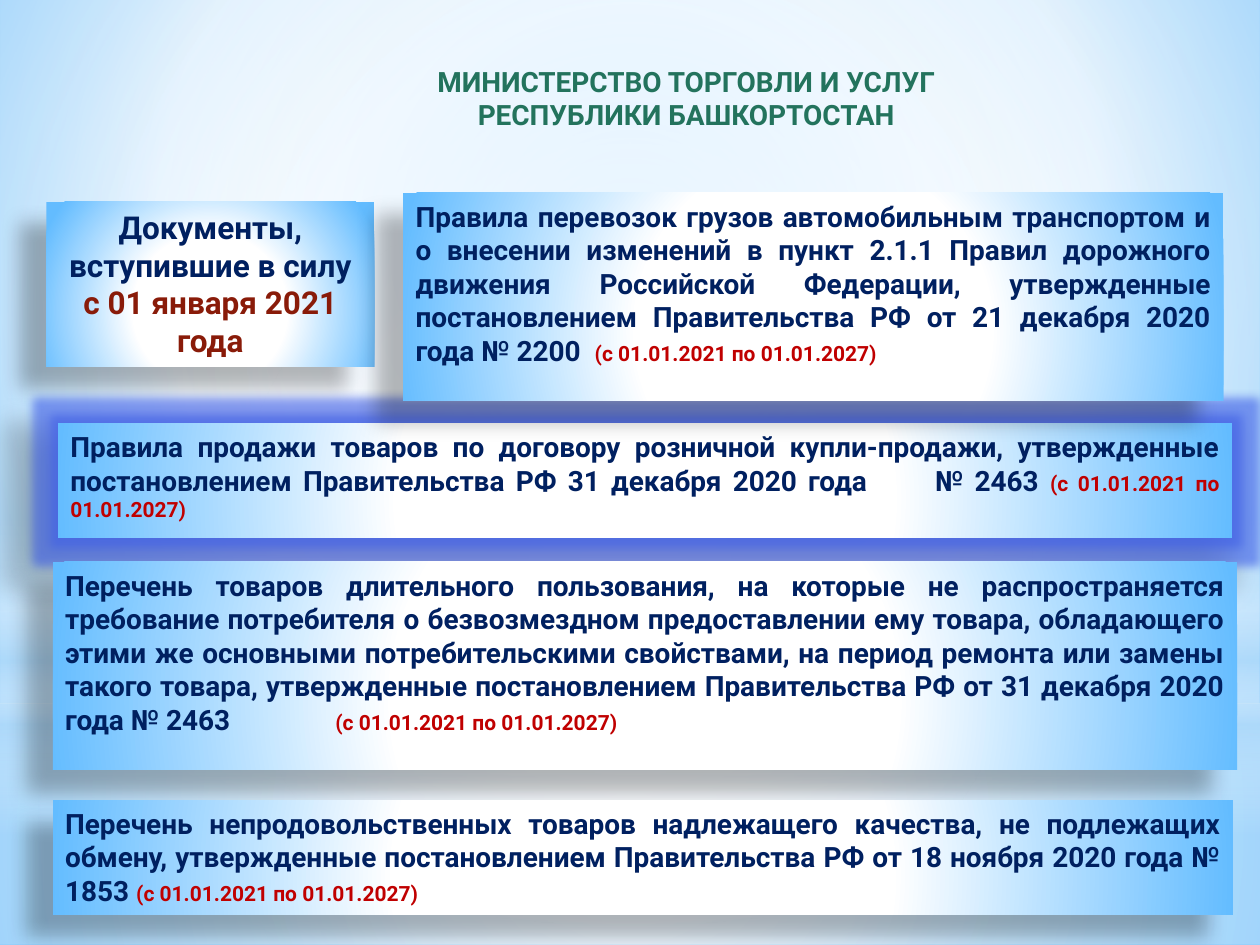
"""Build a slide listing trade regulations in force from 1 January 2021."""
from dataclasses import dataclass
from typing import Any, NamedTuple

import lxml.etree
import pptx
import pptx.dml.color
import pptx.enum.shapes
import pptx.enum.text
import pptx.oxml.ns
import pptx.util

Pt = pptx.util.Pt
qn = pptx.oxml.ns.qn
Align = pptx.enum.text.PP_ALIGN
Preset = pptx.enum.shapes.MSO_SHAPE


class Stop(NamedTuple):
    position: int
    color: str
    opacity: int = 100


class Gradient(NamedTuple):
    stops: tuple[Stop, ...]
    focus: tuple[int, int, int, int] | None = (50, 50, 50, 50)


class Frame(NamedTuple):
    left: float
    top: float
    width: float
    height: float


class Run(NamedTuple):
    text: str
    size: float
    color: str
    tracking: float = 0


@dataclass(frozen=True)
class Theme:
    font: str = "Roboto"
    navy: str = "002060"
    brick: str = "891B09"
    red: str = "C00000"
    green: str = "23735D"
    glow: str = "3F5FE8"
    shadow: str = "000000"
    white: str = "FFFFFF"
    pale: str = "B4DCFA"
    sky: str = "63BCFF"
    light_sky: str = "9ED5FF"
    deep_sky: str = "5BB9FF"
    heading: float = 18
    body: float = 16
    note: float = 12


@dataclass(frozen=True)
class Layer:
    frame: Frame
    gradient: Gradient
    preset: Any = Preset.RECTANGLE


@dataclass(frozen=True)
class Card:
    frame: Frame
    runs: tuple[Run, ...]
    align: Any = Align.JUSTIFY
    glowing: bool = False


THEME = Theme()
PERIOD = Run("(с 01.01.2021 по 01.01.2027)", THEME.note, THEME.red)
BACKDROP = Gradient((Stop(0, THEME.light_sky), Stop(60, THEME.white), Stop(100, THEME.deep_sky)), (20, 10, 20, 60))
CARD_FILL = Gradient((Stop(0, THEME.white), Stop(42, THEME.white), Stop(100, THEME.sky)), (24, 44, 24, 12))
LAYERS = (
    Layer(Frame(0, 401.8, 720, 138.2), Gradient(
        (Stop(0, THEME.white, 91), Stop(37, THEME.white, 76), Stop(100, THEME.pale, 79)))),
    Layer(Frame(0, 0, 720, 401.8), Gradient(
        (Stop(0, THEME.white, 89), Stop(48, THEME.white, 62), Stop(100, THEME.pale, 79)))),
    Layer(Frame(0, 296.6, 720, 180), Gradient(
        (Stop(0, THEME.white, 0), Stop(29, THEME.white, 30), Stop(45, THEME.pale, 40),
         Stop(55, THEME.white, 26), Stop(65, THEME.pale, 60), Stop(100, THEME.white, 0)), None)),
    Layer(Frame(0, 126, 720, 401.8), Gradient(
        (Stop(0, THEME.white), Stop(56, THEME.white, 0))), Preset.OVAL),
)
TITLE_FRAME = Frame(195.8, 33.1, 396.7, 46.1)
TITLE_LINES = ("МИНИСТЕРСТВО ТОРГОВЛИ И УСЛУГ ", "РЕСПУБЛИКИ БАШКОРТОСТАН ")


def body(text: str, tracking: float = 0) -> Run:
    """Return a run in the body style."""
    return Run(text, THEME.body, THEME.navy, tracking)


CARDS = (
    Card(Frame(26.6, 115.2, 187.2, 94.3), (
        Run("Документы, вступившие в силу ", THEME.heading, THEME.navy),
        Run("с 01 января 2021 года", THEME.heading, THEME.brick)), Align.CENTER),
    Card(Frame(33.1, 241.9, 671, 65.5), (
        body("Правила продажи товаров по договору розничной купли-продажи, утвержденные "
             "постановлением Правительства РФ 31 декабря 2020 года"),
        body(" ", 32), body("№ 2463 "), PERIOD), glowing=True),
    Card(Frame(30.2, 321.1, 676.8, 118.8), (
        body("Перечень товаров длительного пользования, на которые не распространяется "
             "требование потребителя о безвозмездном предоставлении ему товара, обладающего "
             "этими же основными потребительскими свойствами, на период ремонта или замены "
             "такого товара, утвержденные постановлением Правительства РФ от 31 декабря 2020 "
             "года № 2463"),
        body(" ", 56), PERIOD)),
    Card(Frame(30.2, 457.2, 674.6, 65.5), (
        body("Перечень непродовольственных товаров надлежащего качества, не подлежащих "
             "обмену, утвержденные постановлением Правительства РФ от 18 ноября 2020 года "
             "№ 1853 "), PERIOD)),
    Card(Frame(230.4, 110.2, 468.7, 118.8), (
        body("Правила перевозок грузов автомобильным транспортом и о внесении изменений "
             "в пункт 2.1.1 Правил дорожного движения Российской Федерации, утвержденные "
             "постановлением Правительства РФ от 21 декабря 2020 года № 2200"),
        body(" ", 4), PERIOD)),
)


def add_node(parent: Any, tag: str, **attributes: Any) -> Any:
    """Append a drawing element with the given attributes."""
    return lxml.etree.SubElement(parent, qn(f"a:{tag}"), {key: str(value) for key, value in attributes.items()})


def add_color(parent: Any, color: str, opacity: int) -> None:
    """Append a colour with an opacity in percent."""
    add_node(add_node(parent, "srgbClr", val=color), "alpha", val=opacity * 1000)


def set_gradient(fill: Any, owner: Any, gradient: Gradient) -> None:
    """Fill an element with a circular or vertical gradient."""
    fill.gradient()
    node = owner.find(f".//{qn('a:gradFill')}")
    node.clear()
    node.set("rotWithShape", "1")
    stops = add_node(node, "gsLst")
    for stop in gradient.stops:
        add_color(add_node(stops, "gs", pos=stop.position * 1000), stop.color, stop.opacity)
    if gradient.focus is None:
        add_node(node, "lin", ang=90 * 60000, scaled=0)
    else:
        edges = {side: edge * 1000 for side, edge in zip("ltrb", gradient.focus)}
        add_node(add_node(node, "path", path="circle"), "fillToRect", **edges)


def add_layer(slide: Any, layer: Layer) -> Any:
    """Draw a borderless gradient shape."""
    shape = slide.shapes.add_shape(layer.preset, *map(Pt, layer.frame))
    shape.shadow.inherit = False
    shape.line.fill.background()
    set_gradient(shape.fill, shape.element, layer.gradient)
    return shape


def add_effects(shape: Any, glowing: bool) -> None:
    """Give a shape a soft shadow and, if asked, a glow."""
    effects = shape.element.find(f".//{qn('a:effectLst')}")
    if glowing:
        add_color(add_node(effects, "glow", rad=Pt(11)), THEME.glow, 60)
    shadow = add_node(effects, "outerShdw", blurRad=Pt(11.8), dist=Pt(19.7),
                      dir=141 * 60000, algn="ctr", rotWithShape=0)
    add_color(shadow, THEME.shadow, 28)


def add_text(para: Any, text: str, *, size: float, color: str, tracking: float = 0) -> None:
    """Append bold text in the given size, colour and letter spacing."""
    span = para.add_run()
    span.text = text
    span.font.name = THEME.font
    span.font.size = Pt(size)
    span.font.bold = True
    span.font.color.rgb = pptx.dml.color.RGBColor.from_string(color)
    if tracking:
        span.font._element.set("spc", str(round(tracking * 100)))


def add_card(slide: Any, card: Card) -> None:
    """Draw a document card with its text."""
    box = add_layer(slide, Layer(card.frame, CARD_FILL))
    add_effects(box, card.glowing)
    box.text_frame.word_wrap = True
    box.text_frame.vertical_anchor = pptx.enum.text.MSO_ANCHOR.TOP
    para = box.text_frame.paragraphs[0]
    para.alignment = card.align
    for run in card.runs:
        add_text(para, run.text, size=run.size, color=run.color, tracking=run.tracking)


def add_title(slide: Any) -> None:
    """Draw the ministry name."""
    frame = slide.shapes.add_textbox(*map(Pt, TITLE_FRAME)).text_frame
    frame.word_wrap = True
    for index, line in enumerate(TITLE_LINES):
        para = frame.add_paragraph() if index else frame.paragraphs[0]
        para.alignment = Align.CENTER
        add_text(para, line, size=THEME.body, color=THEME.green)


def main() -> None:
    """Build and save the deck."""
    deck = pptx.Presentation()
    deck.slide_width, deck.slide_height = Pt(720), Pt(540)
    slide = deck.slides.add_slide(deck.slide_layouts[6])
    set_gradient(slide.background.fill, slide.element, BACKDROP)
    for layer in LAYERS:
        add_layer(slide, layer)
    for card in CARDS:
        add_card(slide, card)
    add_title(slide)
    deck.save("out.pptx")


if __name__ == "__main__":
    main()
